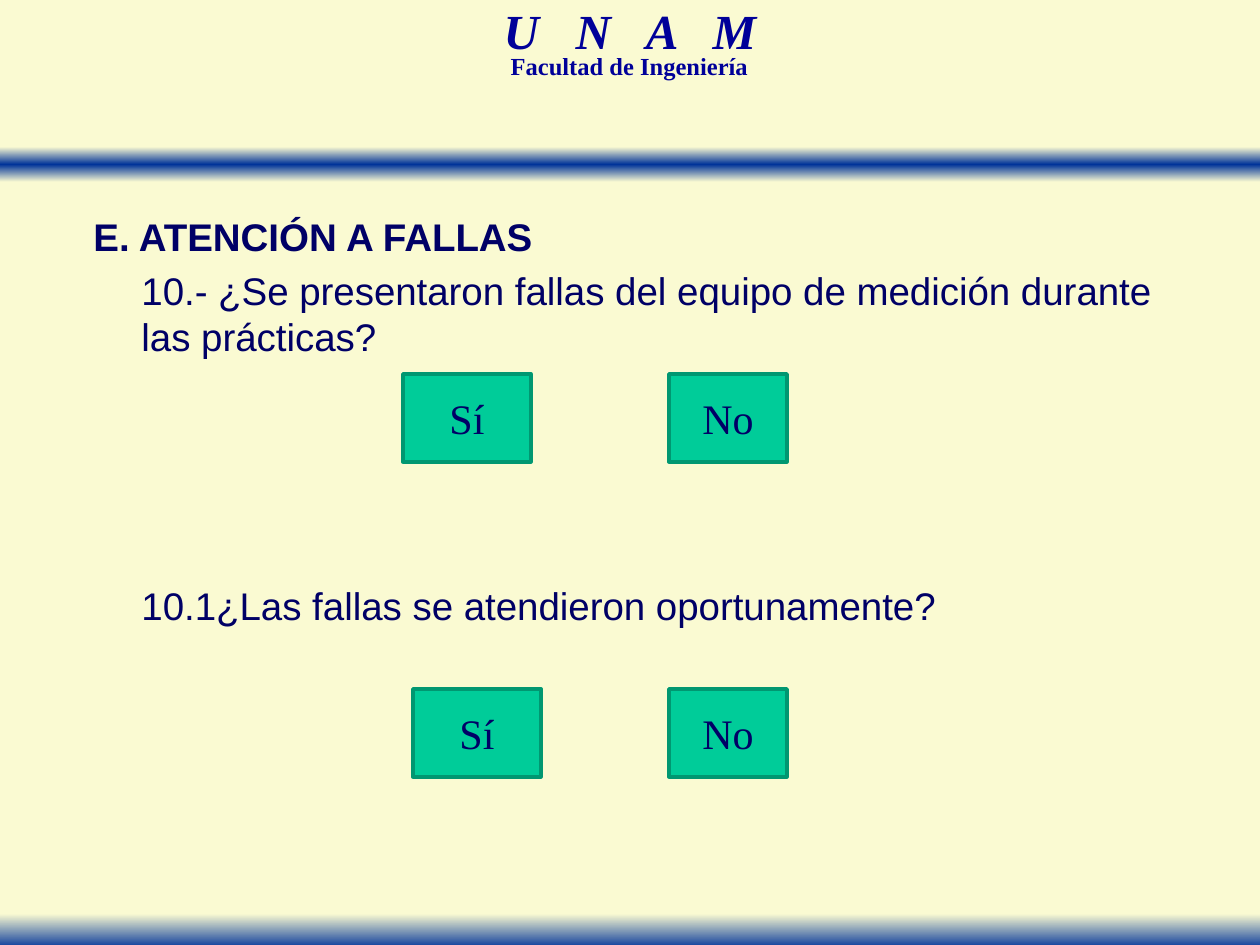
from dataclasses import dataclass

from lxml import etree
from pptx import Presentation
from pptx import util as u
from pptx.dml.color import RGBColor
from pptx.enum import shapes, text
from pptx.oxml.ns import qn


@dataclass(frozen=True)
class Theme:
    cream: str = "FAFAD2"
    band: str = "003399"
    header: str = "000099"
    ink: str = "000066"
    button: str = "00CC99"
    button_line: str = "009771"
    serif: str = "Times New Roman"
    sans: str = "Arial"
    title_size: int = 28
    subtitle_size: int = 14
    body_size: int = 22
    button_size: int = 24


THEME = Theme()
PX_PER_INCH = 126


def px(length):
    return u.Emu(round(length * 914400 / PX_PER_INCH))


def set_font(font, name, size, color, bold=False, italic=False):
    font.name, font.size = name, u.Pt(size)
    font.bold, font.italic = bold, italic
    font.color.rgb = RGBColor.from_string(color)


def add_rectangle(slide, left, top, width, height):
    shape = slide.shapes.add_shape(
        shapes.MSO_SHAPE.RECTANGLE, px(left), px(top), px(width), px(height))
    shape.shadow.inherit = False
    return shape


def add_band(slide, top, stops):
    """Full-width bar shaded from top to bottom; stops are (percent, color)."""
    band = add_rectangle(slide, 0, top, 1260, 35)
    band.line.fill.background()
    band.fill.gradient()
    band.fill.gradient_angle = 270
    stop_list = band.fill._fill._gradFill.find(qn("a:gsLst"))
    for stop in list(stop_list):
        stop_list.remove(stop)
    for percent, color in stops:
        stop = etree.SubElement(stop_list, qn("a:gs"), pos=str(percent * 1000))
        etree.SubElement(stop, qn("a:srgbClr"), val=color)


def add_text_box(slide, left, top, width, height):
    box = slide.shapes.add_textbox(px(left), px(top), px(width), px(height))
    box.text_frame.word_wrap = True
    return box.text_frame


def add_header_line(slide, area, runs, size, italic=False):
    """Centred header text; runs are (text, letter spacing in points)."""
    paragraph = add_text_box(slide, *area).paragraphs[0]
    paragraph.alignment = text.PP_ALIGN.CENTER
    paragraph.line_spacing = 0.7
    for words, spacing in runs:
        run = paragraph.add_run()
        run.text = words
        if spacing:
            run.font._element.set("spc", str(spacing * 100))
    set_font(paragraph.font, THEME.serif, size, THEME.header, True, italic)


def add_questions(slide, area, lines):
    """Body text; lines are (text, indent in px, space before in pt, bold)."""
    frame = add_text_box(slide, *area)
    for index, (words, indent, space, bold) in enumerate(lines):
        paragraph = frame.add_paragraph() if index else frame.paragraphs[0]
        paragraph.text = words
        paragraph._p.get_or_add_pPr().set("marL", str(px(indent)))
        paragraph.space_before = u.Pt(space)
        set_font(paragraph.font, THEME.sans, THEME.body_size, THEME.ink, bold)


def add_button(slide, label, left, top, width):
    button = add_rectangle(slide, left, top, width, 88)
    button.fill.solid()
    button.fill.fore_color.rgb = RGBColor.from_string(THEME.button)
    button.line.color.rgb = RGBColor.from_string(THEME.button_line)
    button.line.width = u.Pt(2)
    button.text_frame.vertical_anchor = text.MSO_ANCHOR.MIDDLE
    paragraph = button.text_frame.paragraphs[0]
    paragraph.text = label
    paragraph.alignment = text.PP_ALIGN.CENTER
    set_font(paragraph.font, THEME.serif, THEME.button_size, THEME.ink)


def main():
    presentation = Presentation()
    presentation.slide_width, presentation.slide_height = px(1260), px(945)
    slide = presentation.slides.add_slide(presentation.slide_layouts[6])
    slide.background.fill.solid()
    slide.background.fill.fore_color.rgb = RGBColor.from_string(THEME.cream)

    # Shaded bands
    add_band(slide, 147, [(0, THEME.cream), (50, THEME.band), (100, THEME.cream)])
    add_band(slide, 914, [(0, THEME.cream), (100, THEME.band)])

    # Header
    add_header_line(slide, (383, 10, 494, 54), [("U N A ", 7), ("M", 0)],
                    THEME.title_size, italic=True)
    add_header_line(slide, (404, 53, 451, 33), [("Facultad de Ingeniería", 0)],
                    THEME.subtitle_size)

    # Questions, with room for the answers between them
    add_questions(slide, (81, 207, 1105, 672), [
        ("E. ATENCIÓN A FALLAS", 0, 0, True),
        ("10.- ¿Se presentaron fallas del equipo de medición durante "
         "las prácticas?", 48, 4.4, False),
        ("10.1¿Las fallas se atendieron oportunamente?", 48, 127, False),
    ])

    # Answer buttons
    for top, yes_left in ((374, 403), (689, 413)):
        add_button(slide, "Sí", yes_left, top, 128)
        add_button(slide, "No", 669, top, 118)

    presentation.save("out.pptx")


if __name__ == "__main__":
    main()
